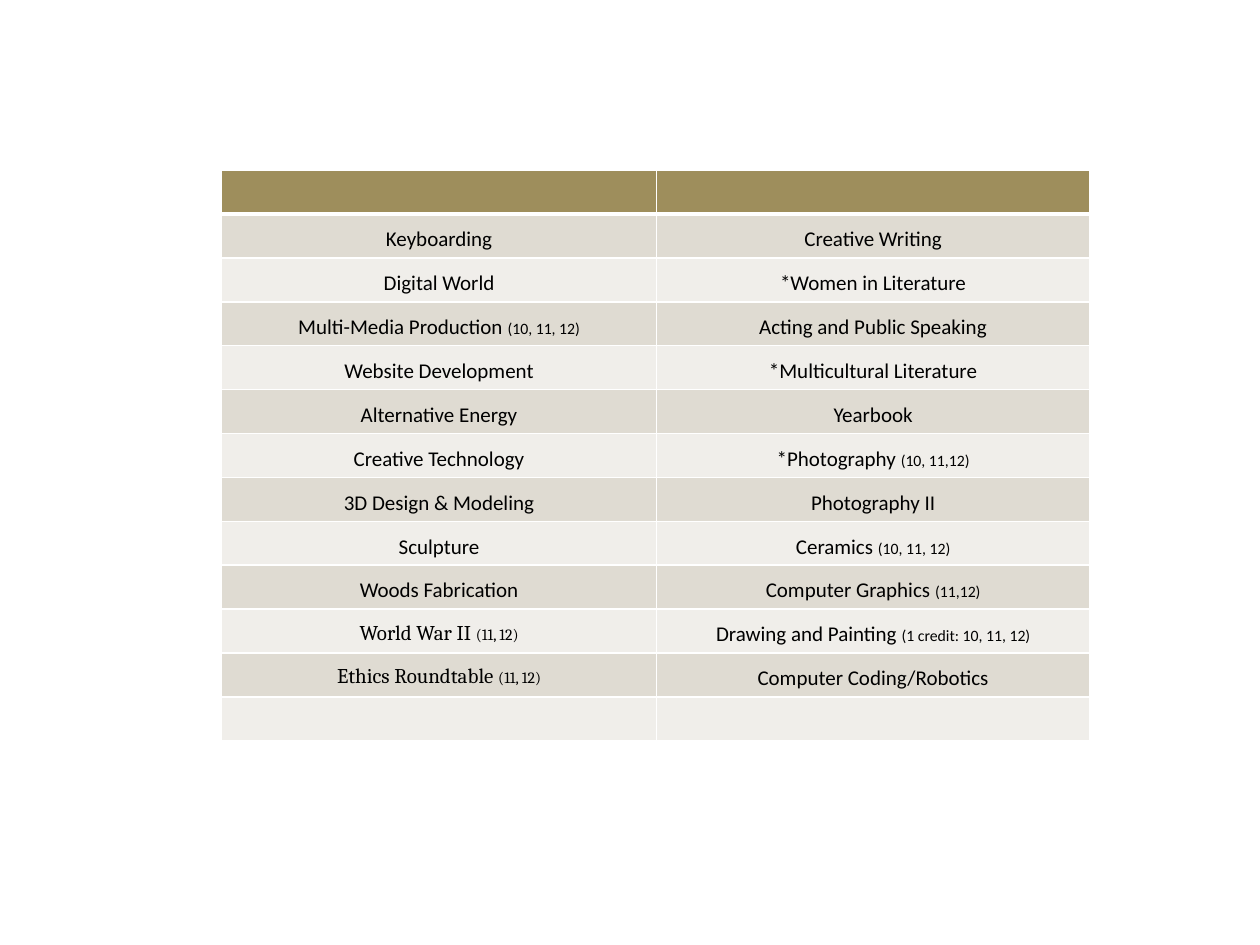
from dataclasses import dataclass

from lxml import etree
from pptx import Presentation
from pptx import util as u
from pptx.dml.color import RGBColor
from pptx.enum import text
from pptx.oxml.ns import qn


@dataclass(frozen=True)
class Theme:
    head: str = "9E8E5C"
    dark: str = "DFDBD2"
    light: str = "F0EEEA"
    rule: str = "FFFFFF"
    ink: str = "000000"
    sans: str = "Calibri"
    serif: str = "Cambria"
    size: int = 12
    small: int = 9


T = Theme()

# Each course is (name, note on grades or credit)
LEFT = [
    ("Keyboarding", ""),
    ("Digital World", ""),
    ("Multi-Media Production", "(10, 11, 12)"),
    ("Website Development", ""),
    ("Alternative Energy", ""),
    ("Creative Technology", ""),
    ("3D Design & Modeling", ""),
    ("Sculpture", ""),
    ("Woods Fabrication", ""),
    ("World War II", "(11, 12)"),
    ("Ethics Roundtable", "(11, 12)"),
]
RIGHT = [
    ("Creative Writing", ""),
    ("*Women in Literature", ""),
    ("Acting and Public Speaking", ""),
    ("*Multicultural Literature", ""),
    ("Yearbook", ""),
    ("*Photography", "(10, 11,12)"),
    ("Photography II", ""),
    ("Ceramics", "(10, 11, 12)"),
    ("Computer Graphics", "(11,12)"),
    ("Drawing and Painting", "(1 credit: 10, 11, 12)"),
    ("Computer Coding/Robotics", ""),
]
SERIF = {"World War II", "Ethics Roundtable"}


def edge(cell, side, width):
    """Draw one border of a cell; side is L, R, T or B, width in points."""
    props = cell._tc.get_or_add_tcPr()
    line = etree.SubElement(props, qn(f"a:ln{side}"), w=str(u.Pt(width)))
    fill = etree.SubElement(line, qn("a:solidFill"))
    etree.SubElement(fill, qn("a:srgbClr"), val=T.rule)


def add_run(para, words, size, face):
    run = para.add_run()
    run.text = words
    run.font.size = u.Pt(size)
    run.font.name = face
    run.font.color.rgb = RGBColor.from_string(T.ink)


deck = Presentation()
deck.slide_width, deck.slide_height = u.Inches(10), u.Inches(7.5)
slide = deck.slides.add_slide(deck.slide_layouts[6])

# One empty header row above the courses and one empty row below
rows = len(LEFT) + 2
table = slide.shapes.add_table(
    rows, 2, u.Inches(1.76), u.Inches(1.35), u.Inches(6.89), u.Inches(4.53)
).table
table.first_row = table.horz_banding = False
for col, width in zip(table.columns, (3.45, 3.44)):
    col.width = u.Inches(width)

for r in range(rows):
    shade = T.head if r == 0 else T.dark if r % 2 else T.light
    for c, names in enumerate((LEFT, RIGHT)):
        cell = table.cell(r, c)
        edge(cell, "L", 1)
        edge(cell, "R", 1)
        edge(cell, "T", 3 if r == 1 else 1)
        edge(cell, "B", 3 if r == 0 else 1)
        cell.fill.solid()
        cell.fill.fore_color.rgb = RGBColor.from_string(shade)
        cell.margin_left = cell.margin_right = u.Inches(0.07)
        cell.margin_top = cell.margin_bottom = 0
        cell.vertical_anchor = text.MSO_ANCHOR.TOP
        if not 0 < r <= len(names):
            continue
        name, note = names[r - 1]
        face = T.serif if name in SERIF else T.sans
        para = cell.text_frame.paragraphs[0]
        para.alignment = text.PP_ALIGN.CENTER
        para.line_spacing = 1.5
        add_run(para, name + " " if note else name, T.size, face)
        if note:
            add_run(para, note, T.small, face)

deck.save("out.pptx")
